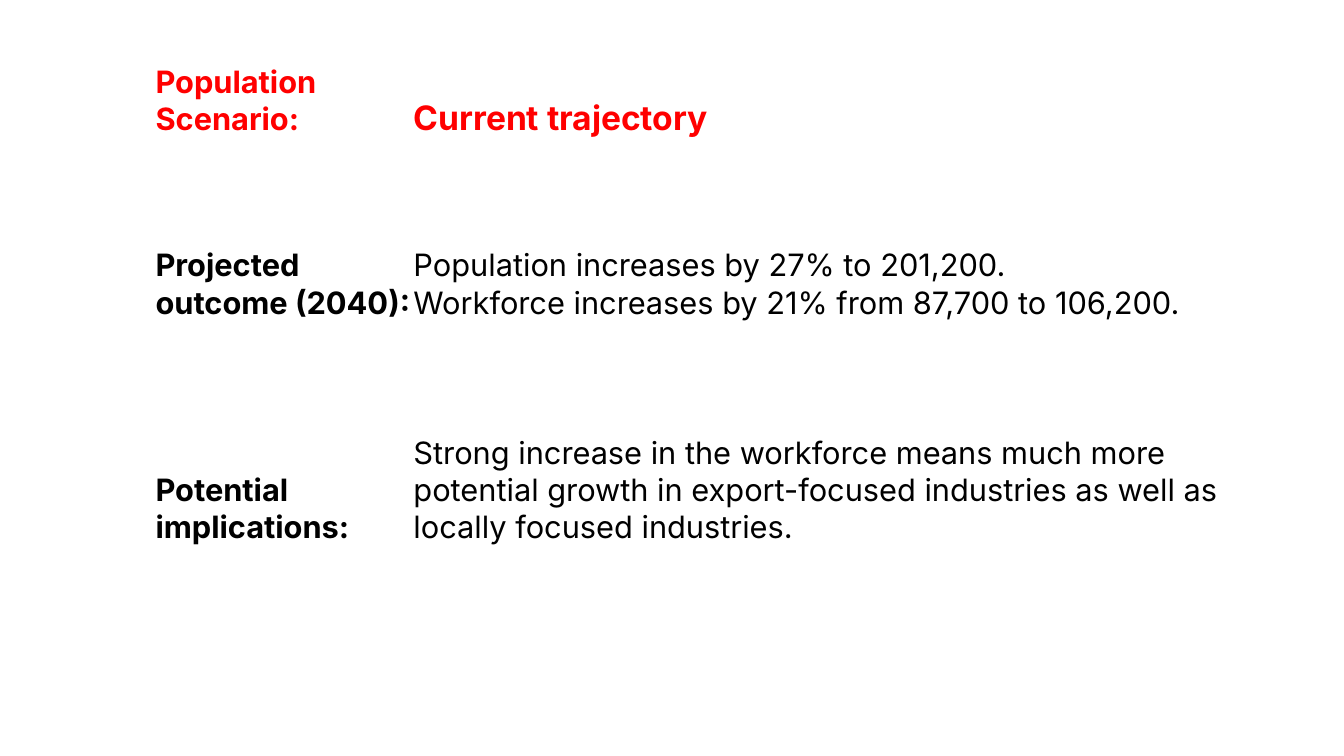
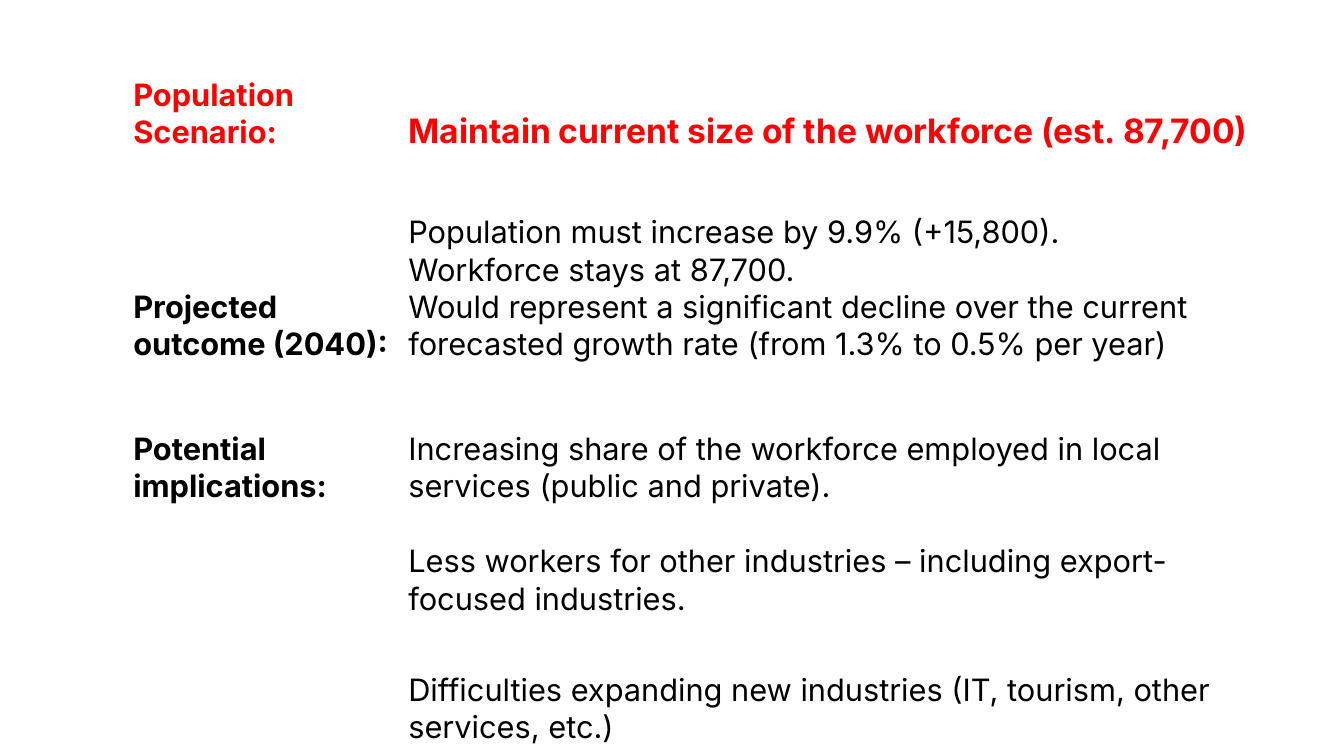
from lxml import etree
from pptx import Presentation
from pptx.dml.color import RGBColor
from pptx.enum import text
from pptx.oxml import ns
from pptx.util import Cm, Pt

COLORS = {"heading": "FF0000", "body": "000000", "border": "FFFFFF"}
FONT = "Inter"
LABELS = ["Population Scenario:", "Projected outcome (2040):", "Potential implications:"]
INSET = Cm(0.03)

SCENARIOS = [
    {
        "box": (3.89, 0.91),
        "columns": (6.5, 20.45),
        "rows": (2.57, 4.62, 5.66, 2.46, 2.79),
        "details": [
            ["Current trajectory"],
            ["Population increases by 27% to 201,200.",
             "Workforce increases by 21% from 87,700 to 106,200."],
            ["Strong increase in the workforce means much more potential growth in "
             "export-focused industries as well as locally focused industries."],
        ],
    },
    {
        "box": (3.33, 0.84),
        "columns": (6.93, 21.87),
        "rows": (2.97, 5.33, 3.58, 2.84, 3.23),
        "details": [
            ["Maintain current size of the workforce (est. 87,700)"],
            ["Population must increase by 9.9% (+15,800).",
             "Workforce stays at 87,700.",
             "Would represent a significant decline over the current forecasted "
             "growth rate (from 1.3% to 0.5% per year)"],
            ["Increasing share of the workforce employed in local services "
             "(public and private)."],
            ["Less workers for other industries – including export-focused industries."],
            ["Difficulties expanding new industries (IT, tourism, other services, etc.)"],
        ],
    },
]


def write(frame, lines, size=22, bold=False, color="body"):
    for index, line in enumerate(lines):
        paragraph = frame.paragraphs[0] if index == 0 else frame.add_paragraph()
        run = paragraph.add_run()
        run.text = line
        run.font.name = FONT
        run.font.size = Pt(size)
        run.font.bold = bold
        run.font.color.rgb = RGBColor.from_string(COLORS[color])


def style_cell(cell):
    """Give a cell thin borders, no fill, tight margins and bottom anchoring."""
    cell.margin_left = cell.margin_right = cell.margin_top = INSET
    cell.margin_bottom = 0
    cell.vertical_anchor = text.MSO_ANCHOR.BOTTOM
    properties = cell._tc.get_or_add_tcPr()
    for side in ("a:lnL", "a:lnR", "a:lnT", "a:lnB"):
        line = etree.SubElement(properties, ns.qn(side), w=str(Pt(1)))
        fill = etree.SubElement(line, ns.qn("a:solidFill"))
        etree.SubElement(fill, ns.qn("a:srgbClr"), val=COLORS["border"])
    cell.fill.background()


def add_scenario_table(slide, box, columns, rows, details):
    left, top = box
    table = slide.shapes.add_table(
        len(rows), len(columns), Cm(left), Cm(top), Cm(sum(columns)), Cm(sum(rows))
    ).table
    table.first_row = table.horz_banding = False
    for column, width in zip(table.columns, columns):
        column.width = Cm(width)
    for row, height in zip(table.rows, rows):
        row.height = Cm(height)
    for cell in table.iter_cells():
        style_cell(cell)
    for index, label in enumerate(LABELS):
        write(table.cell(index, 0).text_frame, [label], bold=True,
              color="body" if index else "heading")
    heading, *body = details
    write(table.cell(0, 1).text_frame, heading, size=24, bold=True, color="heading")
    for index, lines in enumerate(body, start=1):
        write(table.cell(index, 1).text_frame, lines)


def main():
    deck = Presentation()
    deck.slide_width, deck.slide_height = Cm(33.87), Cm(19.05)
    blank_layout = deck.slide_layouts[6]
    for scenario in SCENARIOS:
        add_scenario_table(deck.slides.add_slide(blank_layout), **scenario)
    deck.save("out.pptx")


if __name__ == "__main__":
    main()
